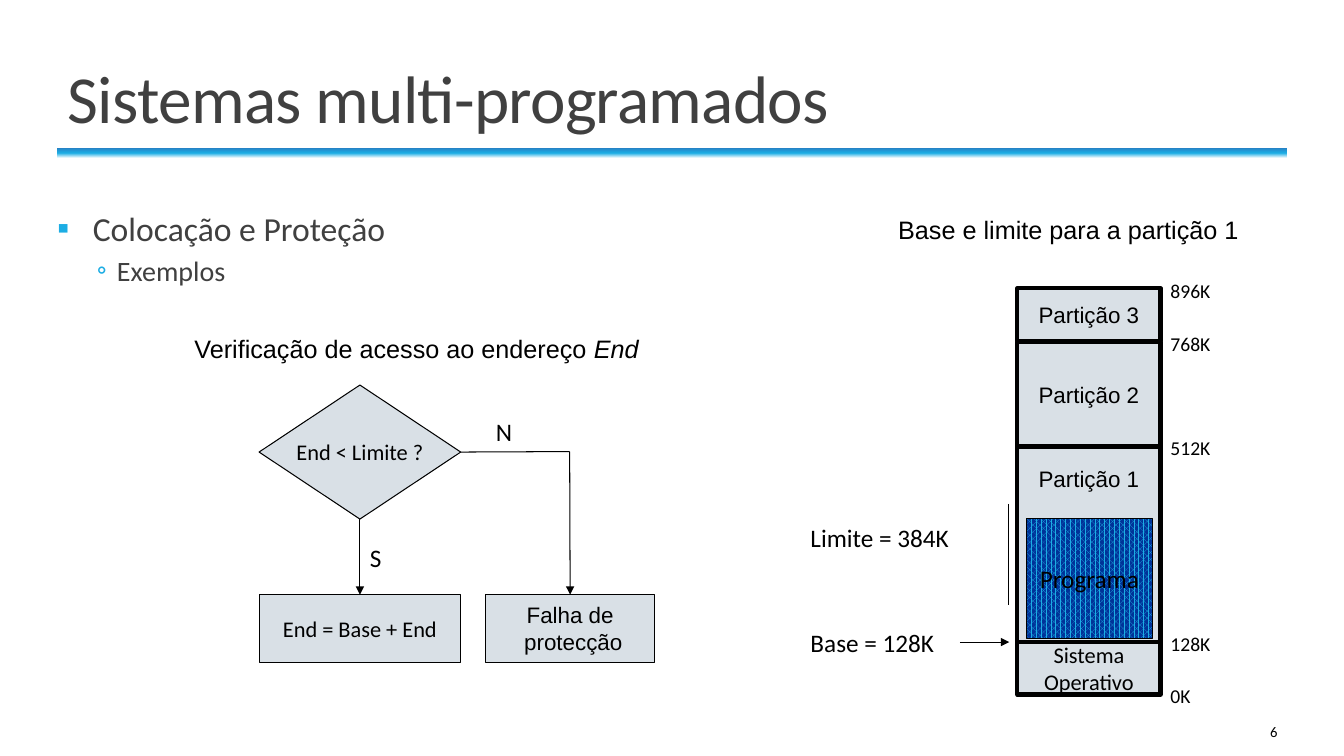
from copy import deepcopy

from lxml.etree import SubElement
from pptx import Presentation
from pptx.dml.color import RGBColor
from pptx.enum.dml import MSO_PATTERN
from pptx.enum.shapes import MSO_CONNECTOR, MSO_SHAPE as SHAPE
from pptx.enum.text import MSO_ANCHOR as ANCHOR, MSO_AUTO_SIZE, PP_ALIGN as ALIGN
from pptx.oxml.ns import qn
from pptx.util import Inches, Pt

BLACK = RGBColor(0x00, 0x00, 0x00)
WHITE = RGBColor(0xFF, 0xFF, 0xFF)
GRAY = RGBColor(0x40, 0x40, 0x40)
PALE = RGBColor(0xD9, 0xE0, 0xE6)
CYAN = RGBColor(0x1C, 0xAD, 0xE4)
BLUE = RGBColor(0x26, 0x83, 0xC6)
NAVY = RGBColor(0x00, 0x33, 0x99)


def add_text(shape, text, size, font="Calibri", align=ALIGN.CENTER, anchor=ANCHOR.MIDDLE, wrap=False):
    frame = shape.text_frame
    for name, value in {"word_wrap": wrap, "vertical_anchor": anchor}.items():
        setattr(frame, name, value)
    para = frame.paragraphs[0]
    para.text = text
    para.alignment = align
    for span in para.runs:
        for name, value in {"name": font, "size": Pt(size)}.items():
            setattr(span.font, name, value)
        span.font.color.rgb = BLACK
    return para


def add_line(start, end, arrow=True):
    line = slide.shapes.add_connector(MSO_CONNECTOR.STRAIGHT, *map(Inches, start + end))
    line.line.width = Pt(0.75)
    line.line.color.rgb = BLACK
    if arrow:
        SubElement(line.line._get_or_add_ln(), qn("a:tailEnd"), type="triangle")
    SubElement(line._element.spPr, qn("a:effectLst"))
    return line


deck = Presentation()
deck.slide_width, deck.slide_height = Inches(13.33), Inches(7.5)
slide = deck.slides.add_slide(deck.slide_layouts[1])
shapes = slide.shapes

# Title and list placeholders
title, body = shapes.title, slide.placeholders[1]
for holder, top, height, anchor in [(title, 0.29, 1.12, ANCHOR.BOTTOM), (body, 2.01, 4.82, ANCHOR.TOP)]:
    holder.left, holder.top, holder.width, holder.height = map(Inches, (0.57, top, 12.2, height))
    holder.text_frame.vertical_anchor = anchor
    holder.text_frame.auto_size = MSO_AUTO_SIZE.NONE
body.text_frame.margin_left = body.text_frame.margin_right = 0
title.text_frame.text = "Sistemas multi-programados"
body.text_frame.text = "Colocação e Proteção\nExemplos"
title_para = title.text_frame.paragraphs[0]
topic, example = body.text_frame.paragraphs
example.level = 1
for para, size, spacing, before, after in [
    (title_para, 48, 0.85, 0, 0),
    (topic, 24, 1.0, 12, 2),
    (example, 20, 1.0, 2, 4),
]:
    formats = {"alignment": ALIGN.LEFT, "line_spacing": spacing,
               "space_before": Pt(before), "space_after": Pt(after)}
    for name, value in formats.items():
        setattr(para, name, value)
    span = para.runs[0]
    span.font.name, span.font.size = "Calibri", Pt(size)
    span.font.color.rgb = GRAY
title_para.runs[0].font._element.set("spc", "-50")

# List bullets
for para, left, indent, mark in [(topic, 0.35, -0.35, "▪"), (example, 0.59, -0.2, "◦")]:
    props = para._p.get_or_add_pPr()
    props.set("marL", str(Inches(left)))
    props.set("indent", str(Inches(indent)))
    SubElement(SubElement(props, qn("a:buClr")), qn("a:srgbClr"), val=str(CYAN))
    SubElement(props, qn("a:buFont"), typeface="Calibri")
    SubElement(props, qn("a:buChar"), char=mark)

# Gradient bar under the title
bar = shapes.add_shape(SHAPE.RECTANGLE, *map(Inches, (0.57, 1.47, 12.2, 0.1)))
bar.shadow.inherit = False
bar.line.fill.background()
bar.fill.gradient()
bar.fill.gradient_angle = 90
stop_list = bar._element.spPr.find(".//" + qn("a:gsLst"))
stop_list.append(deepcopy(stop_list[-1]))
for stop, position, color in zip(bar.fill.gradient_stops, (0, 0.5, 1), (WHITE, CYAN, BLUE)):
    stop.position = position
    stop.color.rgb = color

# Memory partitions and flowchart boxes
boxes = {}
for text, kind, left, top, width, height, border, size, font in [
    ("Partição 3", SHAPE.RECTANGLE, 10.09, 2.86, 1.42, 0.52, 3, 16, "Arial"),
    ("Partição 2", SHAPE.RECTANGLE, 10.09, 3.39, 1.42, 1.05, 3, 16, "Arial"),
    ("Partição 1", SHAPE.RECTANGLE, 10.09, 4.43, 1.42, 1.94, 3, 16, "Arial"),
    ("Sistema\vOperativo", SHAPE.RECTANGLE, 10.09, 6.37, 1.42, 0.52, 3, 16, "Calibri"),
    ("Programa", SHAPE.RECTANGLE, 10.18, 5.14, 1.25, 1.19, 0.75, 18, "Calibri"),
    ("End < Limite ?", SHAPE.FLOWCHART_DECISION, 2.57, 3.82, 2, 1.33, 0.75, 16, "Calibri"),
    ("End = Base + End", SHAPE.RECTANGLE, 2.57, 5.9, 2, 0.67, 0.75, 16, "Calibri"),
    ("Falha de\v protecção", SHAPE.RECTANGLE, 4.82, 5.9, 1.67, 0.67, 0.75, 16, "Arial"),
]:
    box = shapes.add_shape(kind, *map(Inches, (left, top, width, height)))
    box.shadow.inherit = False
    box.fill.solid()
    box.fill.fore_color.rgb = PALE
    box.line.color.rgb = BLACK
    box.line.width = Pt(border)
    add_text(box, text, size, font)
    boxes[text] = box

# Partition 1 carries its name above the program
partition = boxes["Partição 1"].text_frame
partition.vertical_anchor = ANCHOR.TOP
partition.margin_top = Inches(0.18)
program = boxes["Programa"].fill
program.patterned()
program.pattern = MSO_PATTERN.PERCENT_70
program.fore_color.rgb = CYAN
program.back_color.rgb = NAVY

# Labels
for text, left, top, width, height, size, font in [
    ("896K", 11.51, 2.72, 0.71, 0.33, 14, "Calibri"),
    ("768K", 11.51, 3.24, 0.71, 0.33, 14, "Calibri"),
    ("512K", 11.51, 4.28, 0.71, 0.33, 14, "Calibri"),
    ("128K", 11.51, 6.22, 0.71, 0.33, 14, "Calibri"),
    ("0K", 11.51, 6.74, 0.71, 0.33, 14, "Calibri"),
    ("Limite = 384K", 7.94, 5.13, 1.92, 0.4, 18, "Calibri"),
    ("Base = 128K", 7.94, 6.17, 1.92, 0.4, 18, "Calibri"),
    ("N", 4.82, 4.08, 0.5, 0.4, 18, "Calibri"),
    ("S", 3.57, 5.33, 0.5, 0.4, 18, "Calibri"),
    ("Verificação de acesso ao endereço ", 1.83, 3.26, 5.04, 0.4, 18, "Arial"),
    ("Base e limite para a partição 1", 8.81, 2.08, 3.62, 0.4, 18, "Arial"),
]:
    label = shapes.add_textbox(*map(Inches, (left, top, width, height)))
    para = add_text(label, text, size, font, ALIGN.LEFT, ANCHOR.TOP, True)
    if text.startswith("Verificação"):
        span = para.add_run()
        span.text = "End"
        for name, value in {"name": font, "size": Pt(size), "italic": True}.items():
            setattr(span.font, name, value)
        span.font.color.rgb = BLACK

# Flow lines and base arrow
decision = boxes["End < Limite ?"]
yes_arrow = add_line((3.57, 5.15), (3.57, 5.9))
yes_arrow.begin_connect(decision, 2)
yes_arrow.end_connect(boxes["End = Base + End"], 0)
add_line((4.57, 4.48), (5.65, 4.48), arrow=False).begin_connect(decision, 3)
add_line((5.65, 4.48), (5.65, 5.9)).end_connect(boxes["Falha de\v protecção"], 0)
add_line((9.52, 6.37), (10.01, 6.37))

# Limit brace: two curves, mirrored about its middle
MIDDLE, STEPS = 5.33, 12
curves = [
    [(9.84, 4.51), (9.85, 4.66), (9.86, 4.81), (9.84, 4.95)],
    [(9.84, 4.95), (9.83, 5.09), (9.8, 5.21), (9.78, MIDDLE)],
]
upper = []
for curve in curves:
    for step in range(STEPS + 1):
        t = step / STEPS
        weights = ((1 - t) ** 3, 3 * t * (1 - t) ** 2, 3 * t ** 2 * (1 - t), t ** 3)
        upper.append(tuple(sum(w * point[axis] for w, point in zip(weights, curve)) for axis in (0, 1)))
points = upper + [(x, 2 * MIDDLE - y) for x, y in reversed(upper)]
builder = shapes.build_freeform(*points[0], scale=Inches(1))
builder.add_line_segments(points[1:], close=False)
brace = builder.convert_to_shape()
brace.shadow.inherit = False
brace.fill.background()
brace.line.color.rgb = BLACK
brace.line.width = Pt(0.75)

# Page number
number = shapes.add_textbox(*map(Inches, (10.83, 7.06, 1.94, 0.4)))
add_text(number, "6", 10.5, align=ALIGN.RIGHT, wrap=True)

deck.save("out.pptx")
